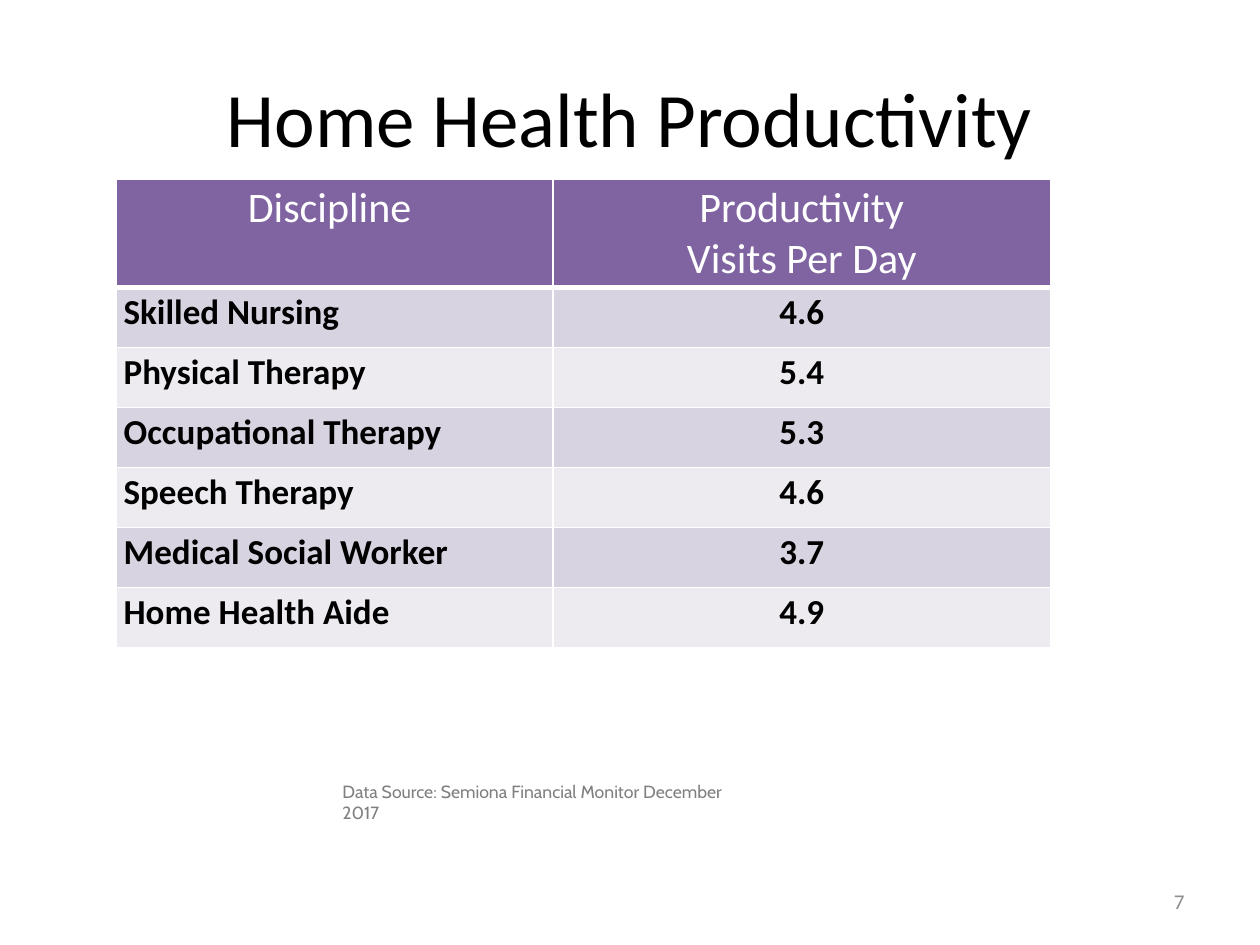
from typing import NamedTuple

from lxml.etree import SubElement
from pptx import Presentation
from pptx.dml.color import RGBColor
from pptx.enum.text import MSO_ANCHOR as Anchor, PP_ALIGN as Align
from pptx.oxml.ns import qn
from pptx.util import Pt

WHITE = RGBColor(0xFF, 0xFF, 0xFF)
BLACK = RGBColor(0x00, 0x00, 0x00)
PURPLE = RGBColor(0x80, 0x64, 0xA2)
BAND_DARK = RGBColor(0xD8, 0xD3, 0xE0)
BAND_LIGHT = RGBColor(0xED, 0xEA, 0xF0)
GRAY = RGBColor(0x80, 0x80, 0x80)
NUMBER_GRAY = RGBColor(0x8C, 0x8C, 0x8C)


class Style(NamedTuple):
    size: float
    color: RGBColor
    align: Align = Align.LEFT
    bold: bool = False
    font: str = "Calibri"


class Label(NamedTuple):
    text: str
    left: float
    top: float
    width: float
    height: float
    style: Style
    anchor: Anchor = Anchor.MIDDLE


class Productivity(NamedTuple):
    discipline: str
    visits: str


LABELS = [
    Label("Home Health Productivity", 36, 21.6, 648, 90,
          Style(44, BLACK, Align.CENTER)),
    Label("7", 516, 500.5, 168, 28.8, Style(12, NUMBER_GRAY, Align.RIGHT)),
    Label("Data Source: Semiona Financial Monitor December 2017",
          188.6, 442.8, 249.8, 19.4, Style(10.1, GRAY, font="Cabin"), Anchor.TOP),
]
HEADER = Productivity("Discipline ", "Productivity\nVisits Per Day")
RECORDS = [
    Productivity("Skilled Nursing", "4.6"),
    Productivity("Physical Therapy", "5.4"),
    Productivity("Occupational Therapy", "5.3"),
    Productivity("Speech Therapy", "4.6"),
    Productivity("Medical Social Worker", "3.7"),
    Productivity("Home Health Aide", "4.9"),
]
HEADER_STYLE = Style(24, WHITE, Align.CENTER)
NAME_STYLE = Style(20, BLACK, bold=True)
VISITS_STYLE = NAME_STYLE._replace(align=Align.CENTER)
COLUMN_WIDTHS = (249.8, 284.4)
HEADER_HEIGHT, ROW_HEIGHT = 50.4, 34.3


def write(frame, text: str, style: Style) -> None:
    frame.text = text
    for para in frame.paragraphs:
        para.alignment = style.align
        for span in para.runs:
            span.font.name = style.font
            span.font.size = Pt(style.size)
            span.font.bold = style.bold
            span.font.color.rgb = style.color


def add_label(page, label: Label) -> None:
    box = page.shapes.add_textbox(Pt(label.left), Pt(label.top),
                                  Pt(label.width), Pt(label.height))
    box.text_frame.word_wrap = True
    box.text_frame.vertical_anchor = label.anchor
    write(box.text_frame, label.text, label.style)


def add_borders(cell, bottom: float) -> None:
    """Draw white borders; they must precede the fill in the cell's XML."""
    properties = cell._tc.get_or_add_tcPr()
    for side, width in (("L", 1), ("R", 1), ("T", 1), ("B", bottom)):
        line = SubElement(properties, qn(f"a:ln{side}"), w=str(Pt(width)))
        fill = SubElement(line, qn("a:solidFill"))
        SubElement(fill, qn("a:srgbClr"), val=str(WHITE))


def fill_cell(cell, text: str, style: Style, color: RGBColor, bottom: float) -> None:
    add_borders(cell, bottom)
    cell.fill.solid()
    cell.fill.fore_color.rgb = color
    cell.margin_left = cell.margin_right = Pt(4.5)
    cell.margin_top = cell.margin_bottom = Pt(2.25)
    write(cell.text_frame, text, style)


def add_productivity_table(page) -> None:
    rows = [HEADER, *RECORDS]
    height = HEADER_HEIGHT + ROW_HEIGHT * len(RECORDS)
    table = page.shapes.add_table(len(rows), len(COLUMN_WIDTHS), Pt(66.2), Pt(102.2),
                                  Pt(sum(COLUMN_WIDTHS)), Pt(height)).table
    for column, width in zip(table.columns, COLUMN_WIDTHS):
        column.width = Pt(width)
    for index, record in enumerate(rows):
        is_header = index == 0
        table.rows[index].height = Pt(HEADER_HEIGHT if is_header else ROW_HEIGHT)
        band = BAND_DARK if index % 2 else BAND_LIGHT
        color = PURPLE if is_header else band
        styles = (HEADER_STYLE,) * 2 if is_header else (NAME_STYLE, VISITS_STYLE)
        for cell, text, style in zip(table.rows[index].cells, record, styles):
            fill_cell(cell, text, style, color, 3 if is_header else 1)


def main() -> None:
    deck = Presentation()
    deck.slide_width, deck.slide_height = Pt(720), Pt(540)
    page = deck.slides.add_slide(deck.slide_layouts[6])
    for label in LABELS:
        add_label(page, label)
    add_productivity_table(page)
    deck.save("out.pptx")


if __name__ == "__main__":
    main()
